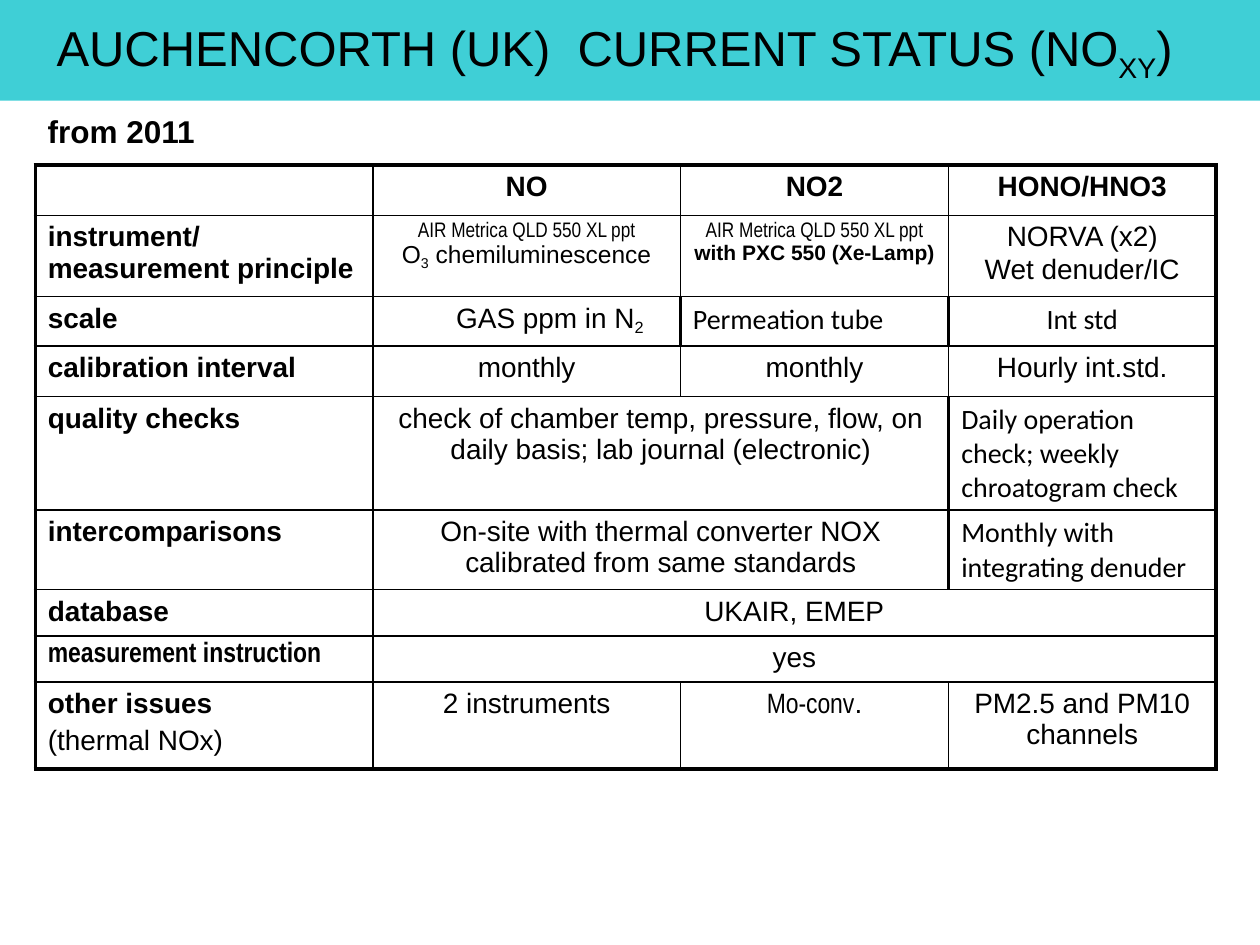
from dataclasses import dataclass

from lxml import etree
from pptx import Presentation
from pptx import util as u
from pptx.dml.color import RGBColor
from pptx.enum import shapes, text
from pptx.oxml.ns import qn


@dataclass(frozen=True)
class Theme:
    band: str = "3FCFD6"
    ink: str = "000000"
    font: str = "Arial"
    narrow: str = "Arial Narrow"
    rounded: str = "Calibri"
    title: int = 28
    heading: int = 18
    body: int = 16
    detail: int = 14
    small: int = 12
    thin: float = 1
    thick: float = 2.25


THEME = Theme()
LEFT, CENTER = text.PP_ALIGN.LEFT, text.PP_ALIGN.CENTER


@dataclass(frozen=True)
class Span:
    text: str
    size: int = THEME.body
    bold: bool = False
    font: str = THEME.font
    baseline: int = 0


@dataclass(frozen=True)
class Para:
    spans: tuple
    align: int = CENTER
    before: float = 0
    indent: float = 0


def line(words, align=CENTER, before=0, **style):
    """One paragraph with a single run, as a cell's or box's content."""
    return [Para((Span(words, **style),), align, before)]


def label(words, font=THEME.font):
    return line(words, LEFT, bold=True, font=font)


def note(words, align=LEFT):
    return line(words, align, font=THEME.rounded)


COLUMNS = [2.68, 2.44, 2.13, 2.12]
ROW_HEIGHTS = [0.39, 0.55, 0.39, 0.4, 0.87, 0.36, 0.33, 0.33, 0.69]
# Cells, as (row, column), whose left edge is heavy
HEAVY_LEFT = {(2, 2), (2, 3), (4, 3), (5, 3)}
ANALYSER = "AIR Metrica QLD 550 XL ppt"

# In a row with fewer than four cells, the second cell spans the gap
ROWS = [
    [[], line("NO", bold=True), line("NO2", bold=True), line("HONO/HNO3", bold=True)],
    [
        label("instrument/ measurement principle"),
        line(ANALYSER, size=THEME.small, font=THEME.narrow)
        + [Para((Span("O", THEME.detail), Span("3", THEME.detail, baseline=-20),
                 Span(" chemiluminescence", THEME.detail)))],
        [Para((Span(ANALYSER + " ", THEME.small, font=THEME.narrow),
               Span("with PXC 550 (Xe-Lamp)", THEME.small, True)))],
        line("NORVA (x2)") + line("Wet denuder/IC", before=0.8),
    ],
    [
        label("scale"),
        [Para((Span("GAS ppm in N"), Span("2", baseline=-20)), indent=0.37)],
        note("Permeation tube"),
        note("Int std", CENTER),
    ],
    [label("calibration interval"), line("monthly"), line("monthly"), line("Hourly int.std.")],
    [
        label("quality checks"),
        line("check of chamber temp, pressure, flow, on daily basis; lab journal (electronic)"),
        note("Daily operation check; weekly chroatogram check"),
    ],
    [
        label("intercomparisons"),
        line("On-site with thermal converter NOX calibrated from same standards"),
        note("Monthly with integrating denuder"),
    ],
    [label("database"), line("UKAIR, EMEP")],
    [label("measurement instruction", THEME.narrow), line("yes")],
    [
        label("other issues") + line("(thermal NOx)", LEFT, before=3.2),
        line("2 instruments"),
        [Para((Span("Mo-conv", font=THEME.narrow), Span(".")))],
        line("PM2.5 and PM10 channels"),
    ],
]


def write(frame, paras):
    for index, para in enumerate(paras):
        target = frame.add_paragraph() if index else frame.paragraphs[0]
        target.alignment = para.align
        if para.before:
            target.space_before = u.Pt(para.before)
        if para.indent:
            target._p.get_or_add_pPr().set("marL", str(u.Inches(para.indent)))
        for span in para.spans:
            run = target.add_run()
            run.text = span.text
            font = run.font
            font.name, font.size, font.bold = span.font, u.Pt(span.size), span.bold
            font.color.rgb = RGBColor.from_string(THEME.ink)
            if span.baseline:
                run._r.get_or_add_rPr().set("baseline", str(span.baseline * 1000))


def add_text(page, left, top, width, height, paras, wrap=True, anchor=text.MSO_ANCHOR.TOP):
    box = page.shapes.add_textbox(*map(u.Inches, (left, top, width, height)))
    box.text_frame.word_wrap = wrap
    box.text_frame.vertical_anchor = anchor
    write(box.text_frame, paras)


def add_band(page):
    band = page.shapes.add_shape(shapes.MSO_SHAPE.RECTANGLE, 0, 0, u.Inches(10), u.Inches(0.8))
    band.shadow.inherit = False
    band.fill.solid()
    band.fill.fore_color.rgb = RGBColor.from_string(THEME.band)
    band.line.fill.background()


def set_borders(cell, heavy):
    """Draw the four edges; heavy maps each edge letter to True or False."""
    properties = cell._tc.get_or_add_tcPr()
    for edge in "LRTB":
        width = THEME.thick if heavy[edge] else THEME.thin
        border = etree.SubElement(properties, qn("a:ln" + edge), w=str(u.Pt(width)))
        fill = etree.SubElement(border, qn("a:solidFill"))
        etree.SubElement(fill, qn("a:srgbClr"), val=THEME.ink)


def add_status_table(page):
    table = page.shapes.add_table(
        len(ROWS), len(COLUMNS), u.Inches(0.28), u.Inches(1.31),
        u.Inches(sum(COLUMNS)), u.Inches(sum(ROW_HEIGHTS))).table
    table.first_row = table.horz_banding = False
    for column, width in zip(table.columns, COLUMNS):
        column.width = u.Inches(width)
    for row, height in zip(table.rows, ROW_HEIGHTS):
        row.height = u.Inches(height)

    for row, contents in enumerate(ROWS):
        col = 0
        for position, paras in enumerate(contents):
            reach = len(COLUMNS) + 1 - len(contents) if position == 1 else 1
            end = col + reach
            cell = table.cell(row, col)
            if reach > 1:
                cell.merge(table.cell(row, end - 1))
            set_borders(cell, {
                "L": col == 0 or (row, col) in HEAVY_LEFT,
                "R": end == len(COLUMNS) or (row, end) in HEAVY_LEFT,
                "T": row == 0,
                "B": row == len(ROWS) - 1,
            })
            cell.fill.background()
            write(cell.text_frame, paras)
            col = end


def main():
    deck = Presentation()
    deck.slide_width, deck.slide_height = u.Inches(10), u.Inches(7.5)
    page = deck.slides.add_slide(deck.slide_layouts[6])
    add_band(page)
    title = Para((Span("AUCHENCORTH (UK)  CURRENT STATUS (NO", THEME.title),
                  Span("XY", THEME.title, baseline=-25), Span(")", THEME.title)), LEFT)
    add_text(page, 0.35, 0.13, 9.29, 0.55, [title], anchor=text.MSO_ANCHOR.MIDDLE)
    add_status_table(page)
    add_text(page, 0.28, 0.84, 1.38, 0.4,
             line("from 2011", LEFT, size=THEME.heading, bold=True), wrap=False)
    deck.save("out.pptx")


if __name__ == "__main__":
    main()
